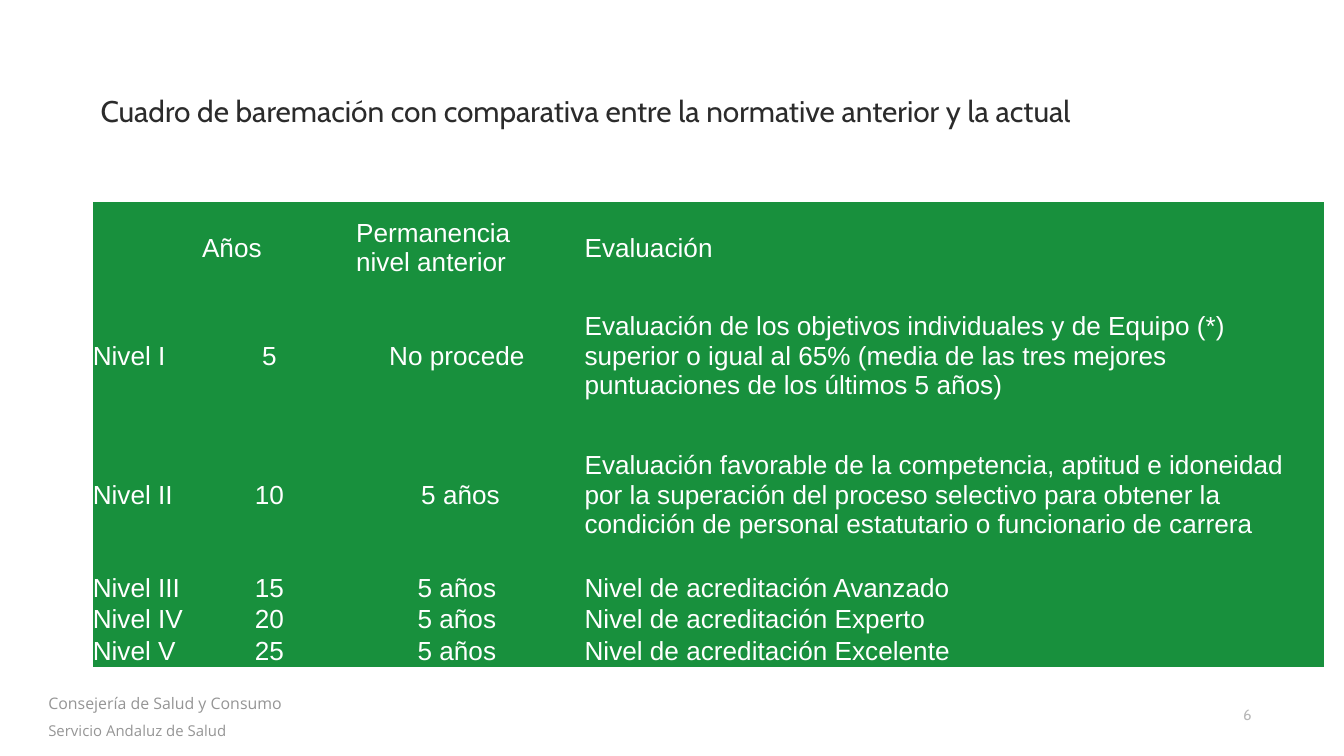
import lxml.etree
import pptx
import pptx.dml.color
import pptx.enum.text
import pptx.oxml.ns
import pptx.util

Inches = pptx.util.Inches
ALIGN = pptx.enum.text.PP_ALIGN

GREEN = "18903D"
WHITE = "FFFFFF"
COLUMN_WIDTHS = [0.77, 1.09, 1.7, 5.6]
ROW_HEIGHTS = [0.69, 0.92, 1.15, 0.23, 0.23, 0.23]
ROWS = [
    ["", " Años", "Permanencia\nnivel anterior", "Evaluación"],
    ["Nivel I", "5", "No procede",
     "Evaluación de los objetivos individuales y de Equipo (*) superior o igual "
     "al 65% (media de las tres mejores puntuaciones de los últimos 5 años)"],
    ["Nivel II", "10", " 5 años",
     "Evaluación favorable de la competencia, aptitud e idoneidad por la "
     "superación del proceso selectivo para obtener la condición de personal "
     "estatutario o funcionario de carrera"],
    ["Nivel III", "15", "5 años", "Nivel de acreditación Avanzado"],
    ["Nivel IV", "20", "5 años", "Nivel de acreditación Experto"],
    ["Nivel V", "25", "5 años", "Nivel de acreditación Excelente"],
]


def color(value):
    """Return the colour for a hex string."""
    return pptx.dml.color.RGBColor.from_string(value)


def set_font(paragraph, name, size, value):
    """Set the font, size and colour of a paragraph."""
    paragraph.font.name = name
    paragraph.font.size = pptx.util.Pt(size)
    paragraph.font.color.rgb = color(value)


def clear_margins(holder):
    """Remove the inner margins of a text frame or cell."""
    holder.margin_left = holder.margin_right = 0
    holder.margin_top = holder.margin_bottom = 0


def clear_borders(cell):
    """Remove the four border lines of a cell."""
    properties = cell._tc.get_or_add_tcPr()
    for position, side in enumerate(("a:lnL", "a:lnR", "a:lnT", "a:lnB")):
        line = lxml.etree.Element(pptx.oxml.ns.qn(side), w="0")
        lxml.etree.SubElement(line, pptx.oxml.ns.qn("a:noFill"))
        properties.insert(position, line)


def add_text(slide, box, lines, font, value, spacing=1.0):
    """Add a text box with one paragraph for each text and size."""
    frame = slide.shapes.add_textbox(*map(Inches, box)).text_frame
    frame.word_wrap = True
    clear_margins(frame)
    frame.text = "\n".join(text for text, size in lines)
    for paragraph, (text, size) in zip(frame.paragraphs, lines):
        paragraph.line_spacing = spacing
        set_font(paragraph, font, size, value)


def fill_cell(cell, text, centered, indented):
    """Write and format one table cell."""
    cell.fill.solid()
    cell.fill.fore_color.rgb = color(GREEN)
    cell.vertical_anchor = pptx.enum.text.MSO_ANCHOR.MIDDLE
    clear_margins(cell)
    clear_borders(cell)
    cell.text = text
    for paragraph in cell.text_frame.paragraphs:
        set_font(paragraph, "Arial", 14, WHITE)
        paragraph.alignment = ALIGN.CENTER if centered else ALIGN.LEFT
        if indented:
            properties = paragraph._p.get_or_add_pPr()
            properties.set("marL", str(Inches(0.1)))
            properties.set("indent", "0")


def add_levels_table(slide):
    """Add the table of career levels and their requirements."""
    table = slide.shapes.add_table(
        len(ROWS), len(COLUMN_WIDTHS), Inches(0.69), Inches(1.5),
        Inches(sum(COLUMN_WIDTHS)), Inches(sum(ROW_HEIGHTS))).table
    table.first_row = table.horz_banding = False
    for column, width in zip(table.columns, COLUMN_WIDTHS):
        column.width = Inches(width)
    for row, height in zip(table.rows, ROW_HEIGHTS):
        row.height = Inches(height)
    for row_index, texts in enumerate(ROWS):
        for column_index, text in enumerate(texts):
            centered = row_index > 0 and column_index in (1, 2)
            indented = column_index >= 2 and not centered
            fill_cell(table.cell(row_index, column_index), text, centered, indented)


def main():
    """Build the slide and save the presentation."""
    presentation = pptx.Presentation()
    presentation.slide_width = Inches(10)
    presentation.slide_height = Inches(10 * 9 / 16)
    slide = presentation.slides.add_slide(presentation.slide_layouts[6])
    add_text(slide, (0.36, 5.09, 1.94, 0.38),
             [("Consejería de Salud y Consumo", 8.5), ("Servicio Andaluz de Salud", 8)],
             "Open Sans", "959595", 1.5)
    add_text(slide, (9.25, 5.25, 0.6, 0.43), [("6", 8)], "Cabin", "B7B7B7")
    add_text(slide, (0.75, 0.69, 7.44, 0.66),
             [("Cuadro de baremación con comparativa entre la normative anterior "
               "y la actual", 16)], "Cabin", "2B2B2B")
    add_levels_table(slide)
    presentation.save("out.pptx")


if __name__ == "__main__":
    main()
